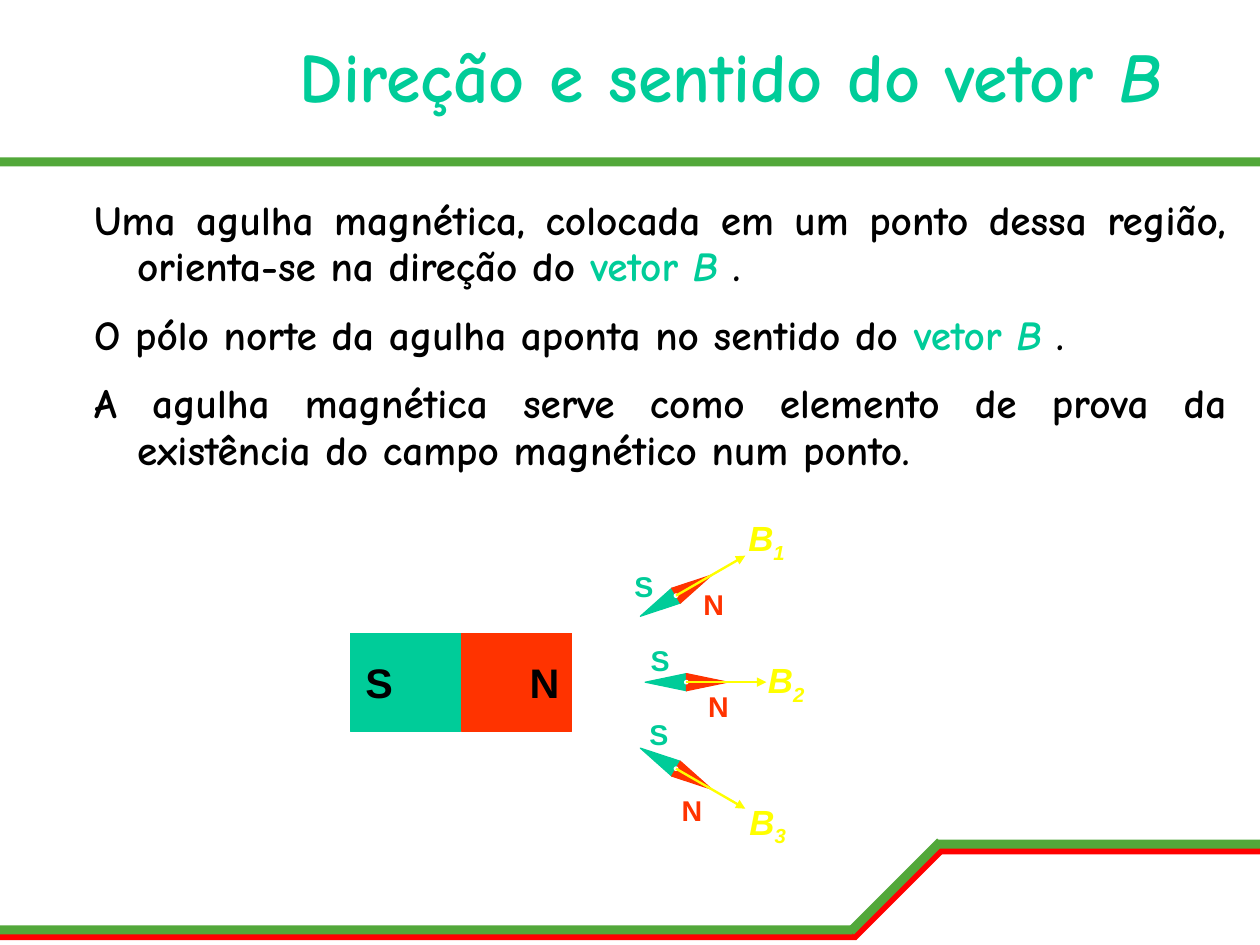
from math import cos, radians, sin
from lxml.etree import SubElement
from pptx import Presentation
from pptx.dml.color import RGBColor
from pptx.enum.shapes import MSO_CONNECTOR, MSO_SHAPE as SHAPE
from pptx.enum.text import MSO_ANCHOR as ANCHOR, PP_ALIGN as ALIGN
from pptx.oxml.ns import qn
from pptx.util import Pt

COLORS = {
    "green": "52A83A", "red": "FF0000", "teal": "00CC99", "orange": "FF3300",
    "yellow": "FFFF00", "black": "000000", "white": "FFFFFF",
}
RGB = {name: RGBColor.from_string(value) for name, value in COLORS.items()}
TITLE = {"name": "Comic Neue", "size": Pt(44), "bold": True}
BODY = {"name": "Comic Neue", "size": Pt(26), "bold": True}
POLE = {"name": "Arial", "size": Pt(26), "bold": True}
NEEDLE = {"name": "Arial", "size": Pt(18), "bold": True}
VECTOR = {"name": "Arial", "size": Pt(22), "bold": True, "italic": True}

prs = Presentation()
prs.slide_width, prs.slide_height = Pt(793.75), Pt(595.25)
s = prs.slides.add_slide(prs.slide_layouts[6])


def add_solid(kind, left, top, width, height, color, rotation=0, outline=True):
    sp = s.shapes.add_shape(kind, Pt(left), Pt(top), Pt(width), Pt(height))
    sp.shadow.inherit = False
    sp.rotation = rotation
    sp.fill.solid()
    sp.fill.fore_color.rgb = RGB[color]
    if outline:
        sp.line.color.rgb = RGB[color]
        sp.line.width = Pt(0.75)
    else:
        sp.line.fill.background()
    return sp


def add_text(left, top, width, height, paragraphs, style, align=ALIGN.CENTER, anchor=ANCHOR.MIDDLE):
    tf = s.shapes.add_textbox(Pt(left), Pt(top), Pt(width), Pt(height)).text_frame
    frame = {"word_wrap": True, "vertical_anchor": anchor, "margin_left": 0,
             "margin_right": 0, "margin_top": 0, "margin_bottom": 0}
    for key, value in frame.items():
        setattr(tf, key, value)
    for i, runs in enumerate(paragraphs):
        p = tf.add_paragraph() if i else tf.paragraphs[0]
        p.alignment = align
        for text, color, extra in runs:
            r = p.add_run()
            r.text = text
            r.font.color.rgb = RGB[color]
            for key, value in {**style, **extra}.items():
                setattr(r.font, key, value)
    return tf


bands = [
    ("red", 0, 586.5, 539.3, 0), ("red", 525.6, 559.2, 79.9, 315), ("red", 590.4, 532.5, 203.35, 0),
    ("green", 0, 99.1, 793.75, 0),
    ("green", 0, 582.9, 537.1, 0), ("green", 524.2, 555.5, 79.9, 315), ("green", 589.7, 528.9, 204.05, 0),
]
for color, left, top, width, rotation in bands:
    sp = add_solid(SHAPE.ROUNDED_RECTANGLE, left, top, width, 5.7, color, rotation, outline=False)
    sp.adjustments[0] = 0.02

tf = add_text(79.9, 0, 713.85, 99.4, [[
    ("Direção e sentido do vetor ", "teal", {}), ("B", "teal", {"italic": True}),
]], TITLE)
tf.margin_left = Pt(47)
tf.paragraphs[0].line_spacing = 0.93

vector_end = [("vetor ", "teal", {}), ("B ", "teal", {"italic": True}), (".", "black", {})]
tf = add_text(59.3, 123.1, 714.2, 392.4, [
    [("Uma agulha magnética, colocada em um ponto dessa região, orienta-se na direção do ", "black", {}),
     *vector_end],
    [("O pólo norte da agulha aponta no sentido do ", "black", {}), *vector_end],
    [("A agulha magnética serve como elemento de prova da existência do campo magnético num ponto.",
      "black", {})],
], BODY, ALIGN.JUSTIFY, ANCHOR.TOP)
tf.margin_top = Pt(2.2)
for p in tf.paragraphs:
    p.line_spacing = 0.93
    p.space_after = Pt(14.2)
    pPr = p._p.get_or_add_pPr()
    pPr.set("marL", str(Pt(27)))
    pPr.set("indent", str(Pt(-27)))

for pole, color, left, label_x in [("N", "orange", 290.8, 343), ("S", "teal", 220.9, 238.9)]:
    add_solid(SHAPE.RECTANGLE, left, 398.9, 69.5, 61.8, color)
    add_text(label_x - 17.5, 409.6, 35, 39.6, [[(pole, "black", {})]], POLE)

needles = [
    ("1", 425.9, 375.2, -30, (449.7, 380.7), (405.7, 369), (482.9, 340.5)),
    ("2", 432.4, 429.7, 0, (452.7, 444.7), (415.9, 416), (495.2, 429.9)),
    ("3", 425.9, 484.2, 30, (435.9, 510.1), (415.1, 462.1), (483.6, 519)),
]
for number, x, y, angle, north, south, vector in needles:
    dx, dy = cos(radians(angle)), sin(radians(angle))
    for pole, color, side, (label_x, label_y) in [("S", "teal", -1, south), ("N", "orange", 1, north)]:
        add_solid(SHAPE.ISOSCELES_TRIANGLE, x + 13 * side * dx - 5.4, y + 13 * side * dy - 13,
                  10.8, 26, color, angle + 90 * side)
        add_text(label_x - 10.8, label_y - 10.8, 21.6, 21.6, [[(pole, color, {})]], NEEDLE)
    add_solid(SHAPE.OVAL, x - 1.1, y - 1.1, 2.2, 2.2, "white")

    arrow = s.shapes.add_connector(MSO_CONNECTOR.STRAIGHT, Pt(x), Pt(y),
                                   Pt(x + 50.4 * dx), Pt(y + 50.4 * dy))
    arrow.line.color.rgb = RGB["yellow"]
    arrow.line.width = Pt(1.5)
    SubElement(arrow.line._get_or_add_ln(), qn("a:tailEnd"), type="triangle")
    SubElement(arrow._element.spPr, qn("a:effectLst"))

    tf = add_text(vector[0] - 19.4, vector[1] - 13.3, 38.8, 26.6,
                  [[("B", "yellow", {}), (number, "yellow", {})]], VECTOR)
    tf.paragraphs[0].runs[1]._r.get_or_add_rPr().set("baseline", "-25000")

prs.save("out.pptx")
